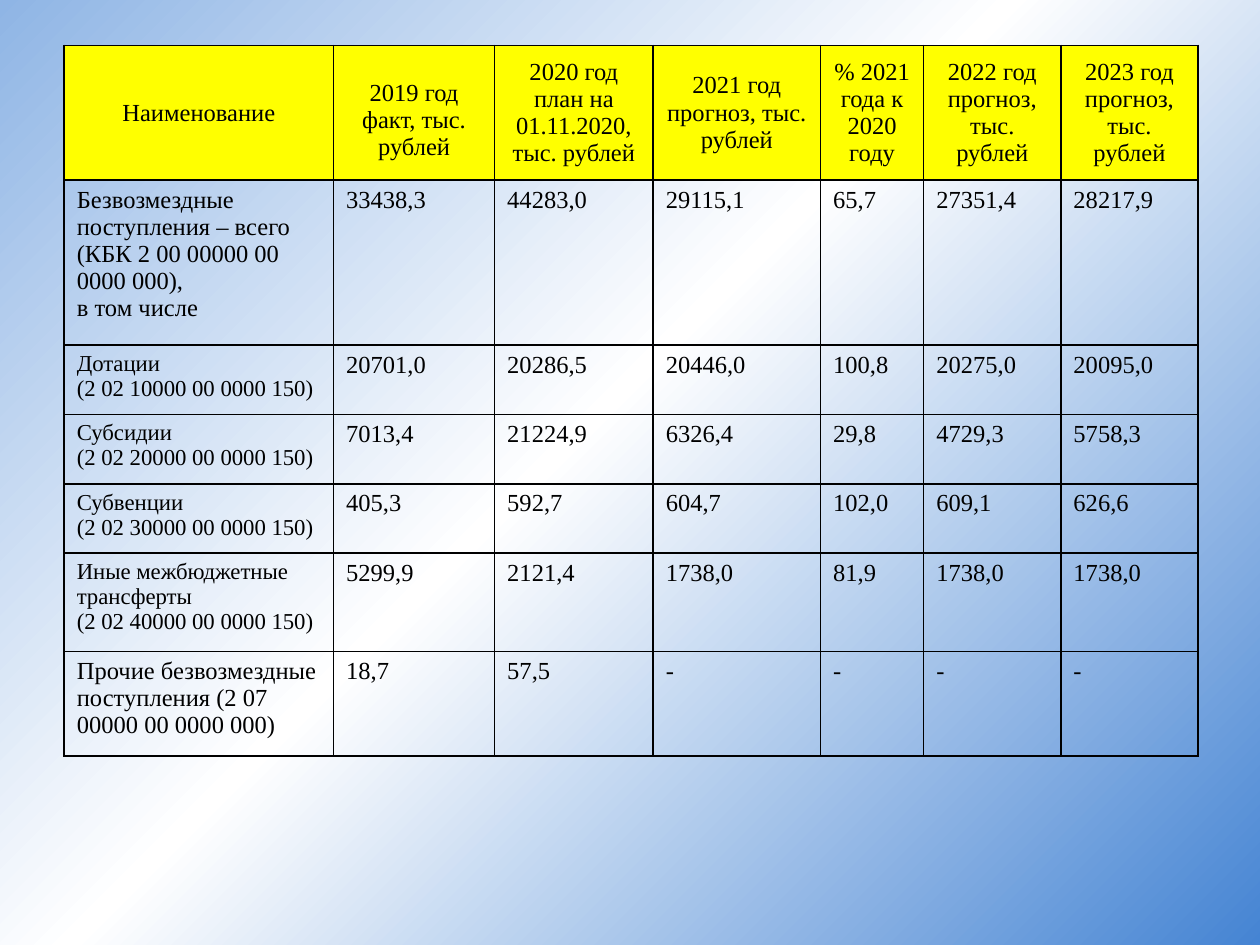
from copy import deepcopy

from lxml import etree
from pptx import Presentation
from pptx import util as u
from pptx.dml.color import RGBColor
from pptx.enum import text
from pptx.oxml import ns

YELLOW = RGBColor(0xFF, 0xFF, 0x00)
BLACK = RGBColor(0x00, 0x00, 0x00)
WHITE = RGBColor(0xFF, 0xFF, 0xFF)
LIGHT_BLUE = RGBColor(0x8F, 0xB5, 0xE5)
DEEP_BLUE = RGBColor(0x45, 0x84, 0xD3)
FONT = "Times New Roman"

COLUMN_SHARES = [2.14, 1.28, 1.26, 1.33, 0.82, 1.09, 1.09]
ROW_SHARES = [1.07, 1.31, 0.55, 0.55, 0.55, 0.78, 0.83]
HEADINGS = [
    "Наименование",
    "2019 год факт, тыс. рублей",
    "2020 год план на 01.11.2020, тыс. рублей",
    "2021 год прогноз, тыс. рублей",
    "% 2021 года к 2020 году",
    "2022 год прогноз, тыс. рублей",
    "2023 год прогноз, тыс. рублей",
]
REVENUES = [
    (["Безвозмездные поступления – всего (КБК 2 00 00000 00 0000 000),", "в том числе"], 14,
     ["33438,3", "44283,0", "29115,1", "65,7", "27351,4", "28217,9"]),
    (["Дотации", "(2 02 10000 00 0000 150)"], 13,
     ["20701,0", "20286,5", "20446,0", "100,8", "20275,0", "20095,0"]),
    (["Субсидии", "(2 02 20000 00 0000 150)"], 13,
     ["7013,4", "21224,9", "6326,4", "29,8", "4729,3", "5758,3"]),
    (["Субвенции", "(2 02 30000 00 0000 150)"], 13,
     ["405,3", "592,7", "604,7", "102,0", "609,1", "626,6"]),
    (["Иные межбюджетные трансферты", "(2 02 40000 00 0000 150)"], 13,
     ["5299,9", "2121,4", "1738,0", "81,9", "1738,0", "1738,0"]),
    (["Прочие безвозмездные поступления (2 07 00000 00 0000 000)"], 14,
     ["18,7", "57,5", "-", "-", "-", "-"]),
]


def paint_background(slide):
    """Fill the slide with a diagonal blue, white and deep blue gradient."""
    fill = slide.background.fill
    fill.gradient()
    fill.gradient_angle = 315
    first = fill.gradient_stops[0]._gs
    first.addnext(deepcopy(first))
    bands = [(0, LIGHT_BLUE), (0.46, WHITE), (1, DEEP_BLUE)]
    for stop, (position, color) in zip(fill.gradient_stops, bands):
        stop.position = position
        stop.color.rgb = color


def draw_borders(cell):
    """Give a cell a thin black line on all four sides."""
    properties = cell._tc.get_or_add_tcPr()
    for index, side in enumerate(["lnL", "lnR", "lnT", "lnB"]):
        line = etree.Element(ns.qn(f"a:{side}"), w=str(u.Pt(1)))
        solid = etree.SubElement(line, ns.qn("a:solidFill"))
        etree.SubElement(solid, ns.qn("a:srgbClr"), val=str(BLACK))
        properties.insert(index, line)


def write_cell(cell, lines, size=14, heading=False):
    """Write one paragraph per line and format the cell."""
    if heading:
        cell.fill.solid()
        cell.fill.fore_color.rgb = YELLOW
        cell.vertical_anchor = text.MSO_ANCHOR.MIDDLE
    else:
        cell.fill.background()
    draw_borders(cell)
    frame = cell.text_frame
    for index, line in enumerate(lines):
        paragraph = frame.add_paragraph() if index else frame.paragraphs[0]
        paragraph.alignment = text.PP_ALIGN.CENTER if heading else text.PP_ALIGN.LEFT
        run = paragraph.add_run()
        run.text = line
        run.font.name = FONT
        run.font.size = u.Pt(size)
        run.font.bold = False
        run.font.color.rgb = BLACK


def add_revenue_table(slide, left, top, width, height):
    """Place the table of budget transfers inside the given box."""
    table = slide.shapes.add_table(
        len(ROW_SHARES), len(COLUMN_SHARES), left, top, width, height).table
    table.horz_banding = False
    for column, share in zip(table.columns, COLUMN_SHARES):
        column.width = int(width * share / sum(COLUMN_SHARES))
    for row, share in zip(table.rows, ROW_SHARES):
        row.height = int(height * share / sum(ROW_SHARES))
    for column, heading in enumerate(HEADINGS):
        write_cell(table.cell(0, column), [heading], heading=True)
    fact_heading = table.cell(0, 1)
    fact_heading.vertical_anchor = text.MSO_ANCHOR.TOP
    fact_heading.margin_top = u.Inches(0.27)
    for row, (name, size, amounts) in enumerate(REVENUES, start=1):
        write_cell(table.cell(row, 0), name, size)
        for column, amount in enumerate(amounts, start=1):
            write_cell(table.cell(row, column), [amount])


def main():
    """Build and save the slide."""
    deck = Presentation()
    deck.slide_width, deck.slide_height = u.Inches(10), u.Inches(7.5)
    slide = deck.slides.add_slide(deck.slide_layouts[6])
    paint_background(slide)
    add_revenue_table(slide, u.Inches(0.51), u.Inches(0.36), u.Inches(9), u.Inches(5.64))
    deck.save("out.pptx")


if __name__ == "__main__":
    main()
